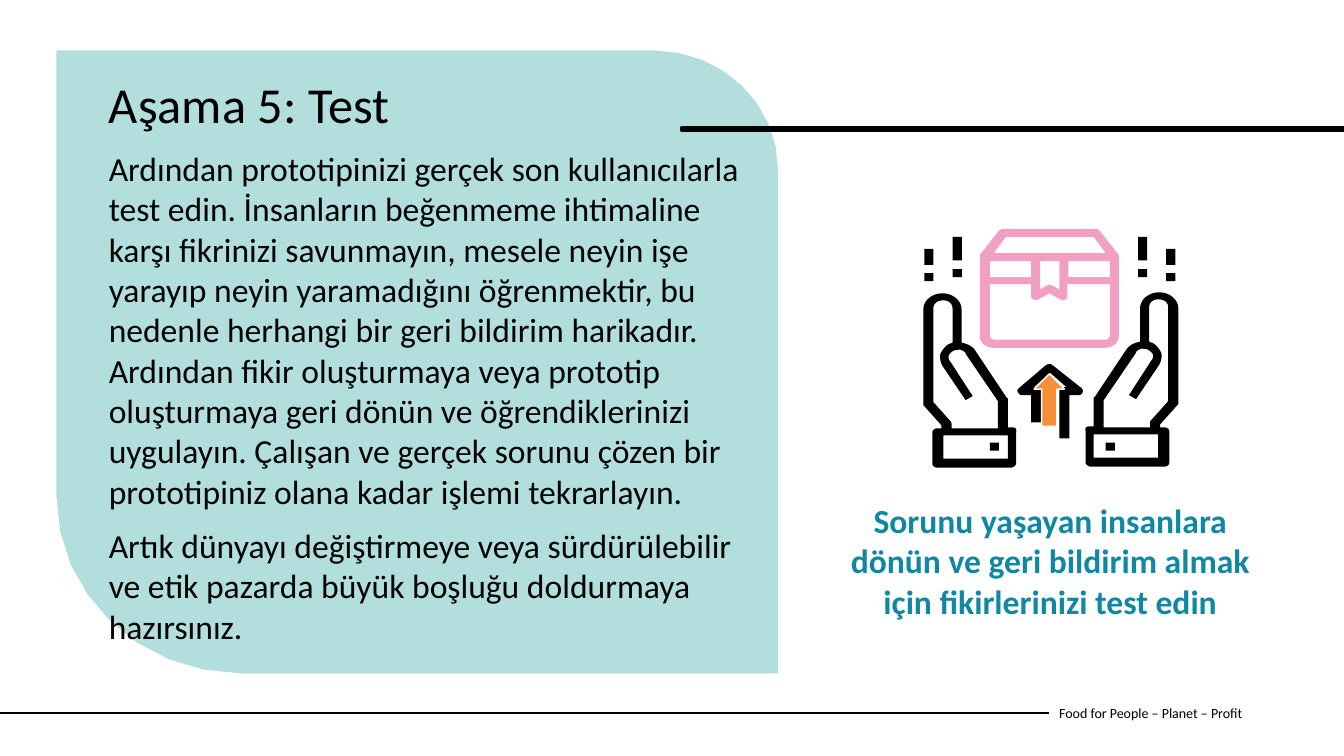
from lxml.etree import SubElement
from pptx import Presentation
from pptx.dml.color import RGBColor
from pptx.enum.shapes import MSO_CONNECTOR, MSO_SHAPE
from pptx.enum.text import MSO_ANCHOR, MSO_AUTO_SIZE, PP_ALIGN
from pptx.oxml.ns import qn
from pptx.util import Pt

BLACK = RGBColor(0x00, 0x00, 0x00)
INK = RGBColor(0x03, 0x03, 0x03)
WHITE = RGBColor(0xFF, 0xFF, 0xFF)
MINT = RGBColor(0xB2, 0xDE, 0xDD)
PINK = RGBColor(0xF1, 0xA0, 0xC2)
ORANGE = RGBColor(0xF6, 0x8F, 0x37)
TEAL = RGBColor(0x11, 0x88, 0xA3)

GRID = 0.72  # points per unit of the outline coordinates
CURVE_STEPS = 8
MIRROR = 2085  # sum of the x values of a point and its mirror point


def write(shape, text, size, color=BLACK, bold=False, align=PP_ALIGN.LEFT,
          anchor=MSO_ANCHOR.TOP, before=0, spacing=1.0):
    frame = shape.text_frame
    frame.word_wrap = True
    frame.auto_size = MSO_AUTO_SIZE.NONE
    frame.vertical_anchor = anchor
    frame.text = text
    for paragraph in frame.paragraphs:
        paragraph.alignment = align
        paragraph.space_before = Pt(before)
        paragraph.line_spacing = spacing
        font = paragraph.font
        font.name, font.size, font.bold = "Calibri", Pt(size), bold
        font.color.rgb = color


def draw_outline(contours, fill):
    """Pairs are corners; sixes are Bézier curves (two controls, end)."""
    builder = None
    for contour in contours:
        points = []
        for step in contour:
            if len(step) == 2:
                points.append(step)
                continue
            (x0, y0), (x1, y1, x2, y2, x3, y3) = points[-1], step
            for i in range(1, CURVE_STEPS + 1):
                t = i / CURVE_STEPS
                a, b, c, d = (1 - t)**3, 3 * t * (1 - t)**2, 3 * t**2 * (1 - t), t**3
                points.append((a * x0 + b * x1 + c * x2 + d * x3,
                               a * y0 + b * y1 + c * y2 + d * y3))
        points = [(Pt(x * GRID), Pt(y * GRID)) for x, y in points]
        if builder is None:
            builder = slide.shapes.build_freeform(*points[0])
        else:
            builder.move_to(*points[0])
        builder.add_line_segments(points[1:], close=True)
    outline = builder.convert_to_shape()
    outline.shadow.inherit = False
    outline.fill.solid()
    outline.fill.fore_color.rgb = fill
    outline.line.fill.background()


deck = Presentation()
deck.slide_width, deck.slide_height = Pt(960), Pt(540)
slide = deck.slides.add_slide(deck.slide_layouts[5])
shapes = slide.shapes

# Footer
footer = shapes.add_textbox(Pt(749.5), Pt(494.6), Pt(196.6), Pt(28.8))
write(footer, "Food for People – Planet – Profit", size=10, anchor=MSO_ANCHOR.MIDDLE)
footer_rule = shapes.add_connector(MSO_CONNECTOR.STRAIGHT, Pt(0), Pt(509), Pt(749.5), Pt(509))
footer_rule.line.color.rgb = BLACK
footer_rule.line.width = Pt(1.5)
SubElement(footer_rule._element.spPr, qn("a:effectLst"))

# Mint panel and the heavy rule beside the title
draw_outline([[(772, 668), (239, 668), (138, 668, 56, 589, 56, 492), (56, 50),
               (648, 50), (717, 50, 772, 103, 772, 169)]], MINT)
title_rule = shapes.add_shape(MSO_SHAPE.RECTANGLE, Pt(486.7), Pt(90.7), Pt(473.3), Pt(2.9))
title_rule.shadow.inherit = False
title_rule.fill.solid()
title_rule.fill.fore_color.rgb = BLACK
title_rule.line.color.rgb = BLACK
title_rule.line.width = Pt(1.93)

# Title, brought in front of the panel
title = shapes.title
title.left, title.top, title.width, title.height = Pt(70.6), Pt(53.3), Pt(393.1), Pt(78.5)
write(title, "Aşama 5: Test", size=36, before=10, spacing=0.9)
title.element.getparent().append(title.element)

# Explanation
explanation = shapes.add_textbox(Pt(70.6), Pt(102.2), Pt(483.8), Pt(359.3))
write(explanation,
      "Ardından prototipinizi gerçek son kullanıcılarla test edin. İnsanların "
      "beğenmeme ihtimaline karşı fikrinizi savunmayın, mesele neyin işe yarayıp "
      "neyin yaramadığını öğrenmektir, bu nedenle herhangi bir geri bildirim "
      "harikadır. Ardından fikir oluşturmaya veya prototip oluşturmaya geri dönün "
      "ve öğrendiklerinizi uygulayın. Çalışan ve gerçek sorunu çözen bir "
      "prototipiniz olana kadar işlemi tekrarlayın.\n"
      "Artık dünyayı değiştirmeye veya sürdürülebilir ve etik pazarda büyük "
      "boşluğu doldurmaya hazırsınız.",
      size=24, color=INK, before=10)

# Parcel: outer edge, lid, ribbon, side panels, front
draw_outline([
    [(1110, 253), (1091, 229), (1090, 228, 1089, 227, 1087, 227), (995, 227),
     (994, 227, 992, 228, 991, 229), (972, 253), (972, 333),
     (972, 340, 978, 345, 986, 345), (1096, 345), (1104, 345, 1110, 340, 1110, 333)],
    [(998, 235), (1085, 235), (1097, 251), (986, 251)],
    [(1051, 259), (1051, 287), (1043, 283), (1042, 282, 1040, 282, 1039, 283),
     (1032, 287), (1032, 259)],
    [(982, 259), (1023, 259), (1023, 275), (982, 275)],
    [(1101, 275), (1060, 275), (1060, 259), (1101, 259)],
    [(1101, 333), (1101, 335, 1099, 337, 1097, 337), (987, 337),
     (984, 337, 982, 335, 982, 333), (982, 282), (1023, 282), (1023, 294),
     (1023, 295, 1024, 297, 1026, 297), (1027, 298, 1029, 298, 1030, 297),
     (1041, 291), (1052, 297), (1054, 298, 1055, 298, 1057, 297),
     (1058, 297, 1059, 295, 1059, 294), (1059, 282), (1101, 282)],
], PINK)

# Black arrow outline
draw_outline([[
    (1044, 362), (1043, 361, 1040, 361, 1038, 362), (1011, 385),
    (1009, 387, 1009, 388, 1010, 389), (1011, 391, 1012, 392, 1014, 392),
    (1023, 392), (1023, 419), (1033, 419), (1033, 388),
    (1033, 386, 1030, 384, 1028, 384), (1026, 384), (1042, 370), (1058, 384),
    (1056, 384), (1054, 384, 1051, 386, 1051, 388), (1051, 435), (1061, 435),
    (1061, 392), (1070, 392), (1072, 392, 1074, 391, 1074, 389),
    (1075, 388, 1074, 386, 1073, 385)]], BLACK)

# Hands: silhouette, palm, cuff; the right one mirrors the left
left_hand = [
    [(1004, 424), (1000, 424), (1000, 397), (1000, 396, 1000, 395, 999, 395),
     (967, 347), (964, 343, 959, 341, 954, 340), (954, 307),
     (954, 298, 945, 291, 935, 291), (925, 291, 916, 298, 916, 307), (916, 401),
     (916, 401, 916, 403, 917, 403), (934, 422), (934, 425), (930, 425),
     (927, 425, 925, 427, 925, 429), (925, 460), (925, 462, 927, 464, 930, 464),
     (1003, 464), (1005, 464, 1008, 462, 1008, 460), (1008, 429),
     (1009, 425, 1007, 424, 1004, 424)],
    [(926, 399), (926, 306), (926, 301, 930, 298, 936, 298),
     (941, 298, 945, 301, 945, 306), (945, 340), (944, 340, 944, 341, 942, 341),
     (938, 343, 935, 347, 933, 351), (932, 355, 933, 359, 935, 363), (958, 397),
     (965, 393), (943, 359), (941, 357, 941, 355, 941, 353),
     (942, 351, 944, 349, 946, 348), (948, 347, 951, 347, 953, 347),
     (955, 348, 958, 349, 958, 351), (990, 398), (990, 425), (944, 425),
     (944, 421), (944, 420, 944, 419, 943, 418)],
    [(1000, 455), (936, 455), (936, 432), (1000, 432)],
]
right_hand = [[tuple(v - 1 if i % 2 else MIRROR - v for i, v in enumerate(step))
               for step in contour] for contour in left_hand]
draw_outline(left_hand, BLACK)
draw_outline(right_hand, BLACK)

# Exclamation marks (bar and dot on either side) and cuff buttons: x, y, height
marks = [(707, 316.1, 5.8), (789.8, 316.1, 5.8)]
for x in (680.4, 812.9):
    marks += [(x, 169.2, 16.8), (x, 192.2, 5.8)]
for x in (660.2, 833):
    marks += [(x, 177.8, 11.5), (x, 195.1, 5.8)]
for x, y, height in marks:
    mark = shapes.add_shape(MSO_SHAPE.RECTANGLE, Pt(x), Pt(y), Pt(6.6), Pt(height))
    mark.shadow.inherit = False
    mark.fill.solid()
    mark.fill.fore_color.rgb = BLACK
    mark.line.fill.background()

# Orange arrow
lift_arrow = shapes.add_shape(MSO_SHAPE.UP_ARROW, Pt(738.7), Pt(267.1), Pt(21.6), Pt(37.4))
lift_arrow.shadow.inherit = False
lift_arrow.fill.solid()
lift_arrow.fill.fore_color.rgb = ORANGE
lift_arrow.line.color.rgb = WHITE
lift_arrow.line.width = Pt(1)

# Caption below the icon
caption = shapes.add_textbox(Pt(596.9), Pt(353.5), Pt(306.7), Pt(94.3))
write(caption,
      "Sorunu yaşayan insanlara dönün ve geri bildirim almak için fikirlerinizi test edin",
      size=24, color=TEAL, bold=True, align=PP_ALIGN.CENTER)

deck.save("out.pptx")
